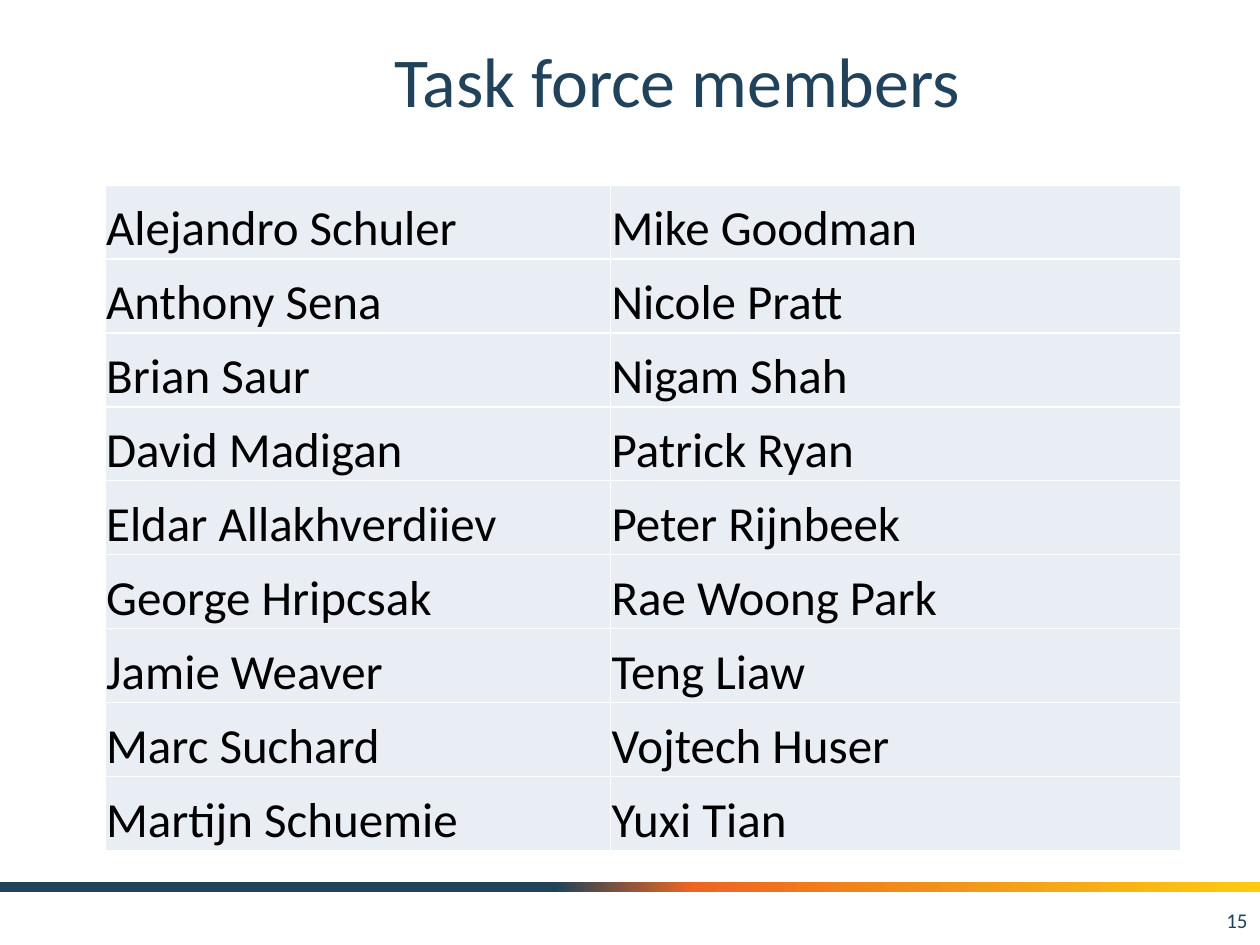
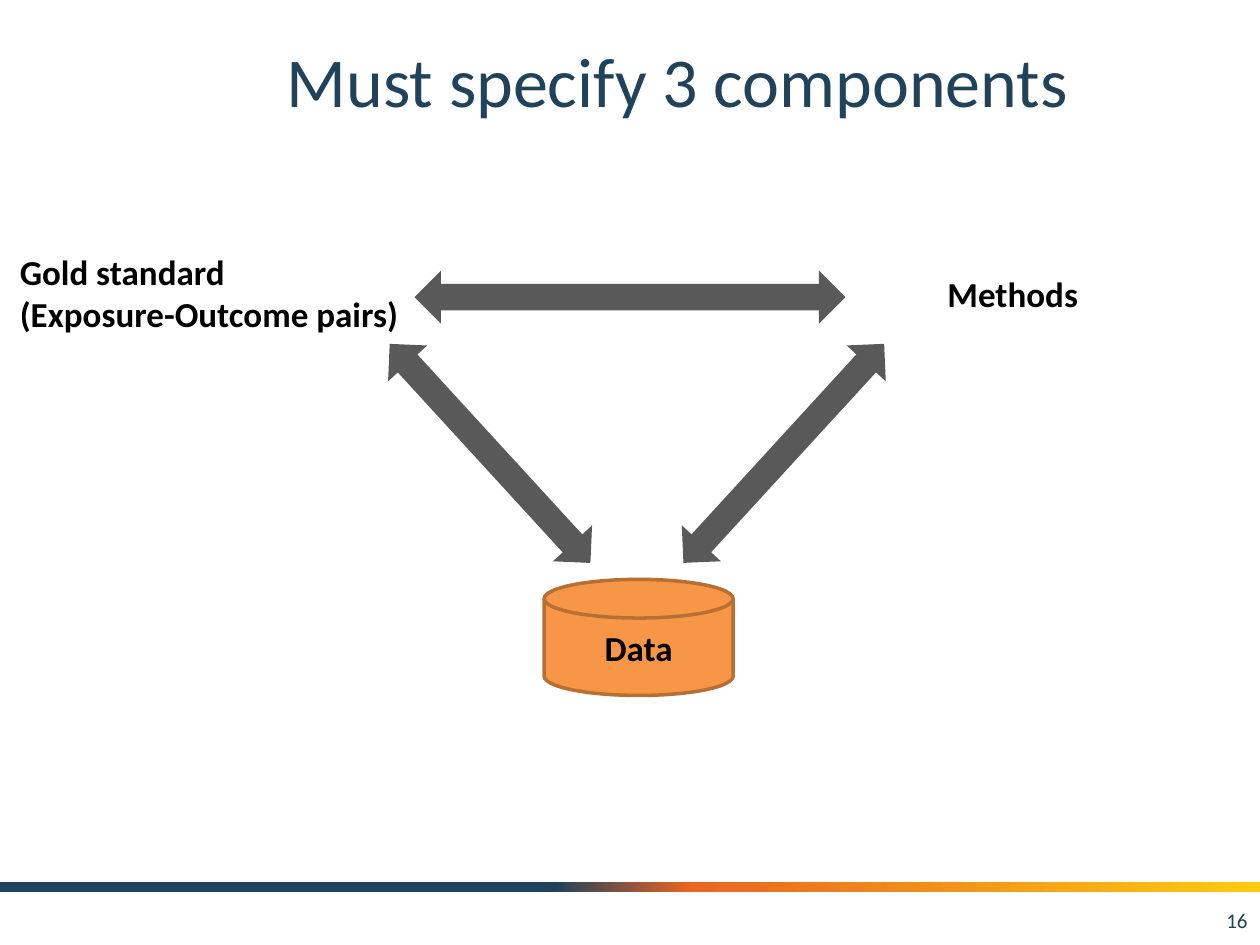
from lxml.etree import SubElement
from pptx import Presentation
from pptx.dml.color import RGBColor
from pptx.enum.shapes import MSO_SHAPE
from pptx.enum.text import MSO_ANCHOR, PP_ALIGN
from pptx.oxml import parse_xml
from pptx.oxml.ns import nsdecls, qn
from pptx.util import Cm, Pt

# Content
MEMBERS = [
    ("Alejandro Schuler", "Mike Goodman"),
    ("Anthony Sena", "Nicole Pratt"),
    ("Brian Saur", "Nigam Shah"),
    ("David Madigan", "Patrick Ryan"),
    ("Eldar Allakhverdiiev", "Peter Rijnbeek"),
    ("George Hripcsak", "Rae Woong Park"),
    ("Jamie Weaver", "Teng Liaw"),
    ("Marc Suchard", "Vojtech Huser"),
    ("Martijn Schuemie", "Yuxi Tian"),
]
# Label text, then left, top, width, height in cm
LABELS = [
    ("Methods", (18.85, 5.36, 3.18, 1.12)),
    ("Gold standard\n(Exposure-Outcome pairs)", (0.15, 4.93, 8.2, 1.96)),
]
# Arrow centre x, centre y, length in cm, then rotation in degrees
ARROWS = [
    (15.8, 9.14, 5.99, 42.5),
    (9.88, 9.14, 5.99, -42.5),
    (12.7, 5.99, 8.69, -90),
]
ARROW_WIDTH = 1.07

# Shared style
FONT = "Calibri"
COLORS = {
    "navy": "20425A", "orange": "EB6622", "yellow": "FCCB10",
    "text": "000000", "cell": "E9EDF4", "border": "FFFFFF",
    "disk": "F79646", "disk_line": "B76F34", "arrow": "595959",
}
BAND_STOPS = [(44, "navy"), (55, "orange"), (100, "yellow")]


def rgb(name):
    return RGBColor.from_string(COLORS[name])


def style_text(tf, text, size, color="text", bold=False, align=PP_ALIGN.LEFT,
               anchor=MSO_ANCHOR.MIDDLE):
    tf.text = text
    tf.vertical_anchor = anchor
    for p in tf.paragraphs:
        p.alignment = align
        for r in p.runs:
            r.font.name = FONT
            r.font.size = Pt(size)
            r.font.bold = bold
            r.font.color.rgb = rgb(color)


def add_text(slide, box, text, size, wrap=True, **style):
    sp = slide.shapes.add_textbox(*map(Cm, box))
    sp.text_frame.word_wrap = wrap
    style_text(sp.text_frame, text, size, **style)


def add_shape(slide, kind, box, fill=None):
    sp = slide.shapes.add_shape(kind, *map(Cm, box))
    sp.shadow.inherit = False
    sp.line.fill.background()
    if fill:
        sp.fill.solid()
        sp.fill.fore_color.rgb = rgb(fill)
    return sp


def add_band(slide):
    band = add_shape(slide, MSO_SHAPE.RECTANGLE, (0, 17.78, 25.4, 0.2))
    band.fill.gradient()
    band.fill.gradient_angle = 0
    stops = band.fill._fill._gradFill.find(qn("a:gsLst"))
    for gs in list(stops):
        stops.remove(gs)
    for percent, name in BAND_STOPS:
        gs = SubElement(stops, qn("a:gs"), pos=str(percent * 1000))
        SubElement(gs, qn("a:srgbClr"), val=COLORS[name])


def new_slide(prs, title, number):
    slide = prs.slides.add_slide(prs.slide_layouts[6])
    add_band(slide)
    add_text(slide, (3.18, 0.43, 20.95, 2.34), title, 40, color="navy",
             align=PP_ALIGN.CENTER)
    add_text(slide, (19.48, 18.03, 5.92, 1.02), str(number), 12, color="navy",
             align=PP_ALIGN.RIGHT)
    return slide


def set_borders(cell):
    tcPr = cell._tc.get_or_add_tcPr()
    for i, side in enumerate(("lnL", "lnR", "lnT", "lnB")):
        tcPr.insert(i, parse_xml(
            f'<a:{side} {nsdecls("a")} w="{Pt(1)}"><a:solidFill>'
            f'<a:srgbClr val="{COLORS["border"]}"/></a:solidFill></a:{side}>'))


def add_members(slide):
    widths, row_height = (10.19, 11.5), 1.49
    table = slide.shapes.add_table(
        len(MEMBERS), len(widths), Cm(2.12), Cm(3.73),
        Cm(sum(widths)), Cm(row_height * len(MEMBERS))).table
    table.first_row = table.horz_banding = False
    for column, width in zip(table.columns, widths):
        column.width = Cm(width)
    for row, names in zip(table.rows, MEMBERS):
        row.height = Cm(row_height)
        for cell, name in zip(row.cells, names):
            cell.margin_left = cell.margin_right = cell.margin_top = Cm(0.02)
            cell.margin_bottom = 0
            style_text(cell.text_frame, name, 28)
            cell.vertical_anchor = MSO_ANCHOR.BOTTOM
            cell.fill.solid()
            cell.fill.fore_color.rgb = rgb("cell")
            set_borders(cell)


def add_components(slide):
    # Data store
    disk = add_shape(slide, MSO_SHAPE.FLOWCHART_MAGNETIC_DISK,
                     (10.97, 11.68, 3.81, 2.34), "disk")
    disk.line.color.rgb = rgb("disk_line")
    disk.line.width = Pt(2)
    style_text(disk.text_frame, "Data", 20, bold=True, align=PP_ALIGN.CENTER)

    # Other two components
    for text, box in LABELS:
        add_text(slide, box, text, 20, wrap=False, bold=True,
                 anchor=MSO_ANCHOR.TOP)

    # Links between the components
    for x, y, length, angle in ARROWS:
        box = (x - ARROW_WIDTH / 2, y - length / 2, ARROW_WIDTH, length)
        arrow = add_shape(slide, MSO_SHAPE.UP_DOWN_ARROW, box, "arrow")
        arrow.rotation = angle


def main():
    prs = Presentation()
    prs.slide_width, prs.slide_height = Cm(25.4), Cm(19.05)
    add_members(new_slide(prs, "Task force members", 15))
    add_components(new_slide(prs, "Must specify 3 components", 16))
    prs.save("out.pptx")


if __name__ == "__main__":
    main()
